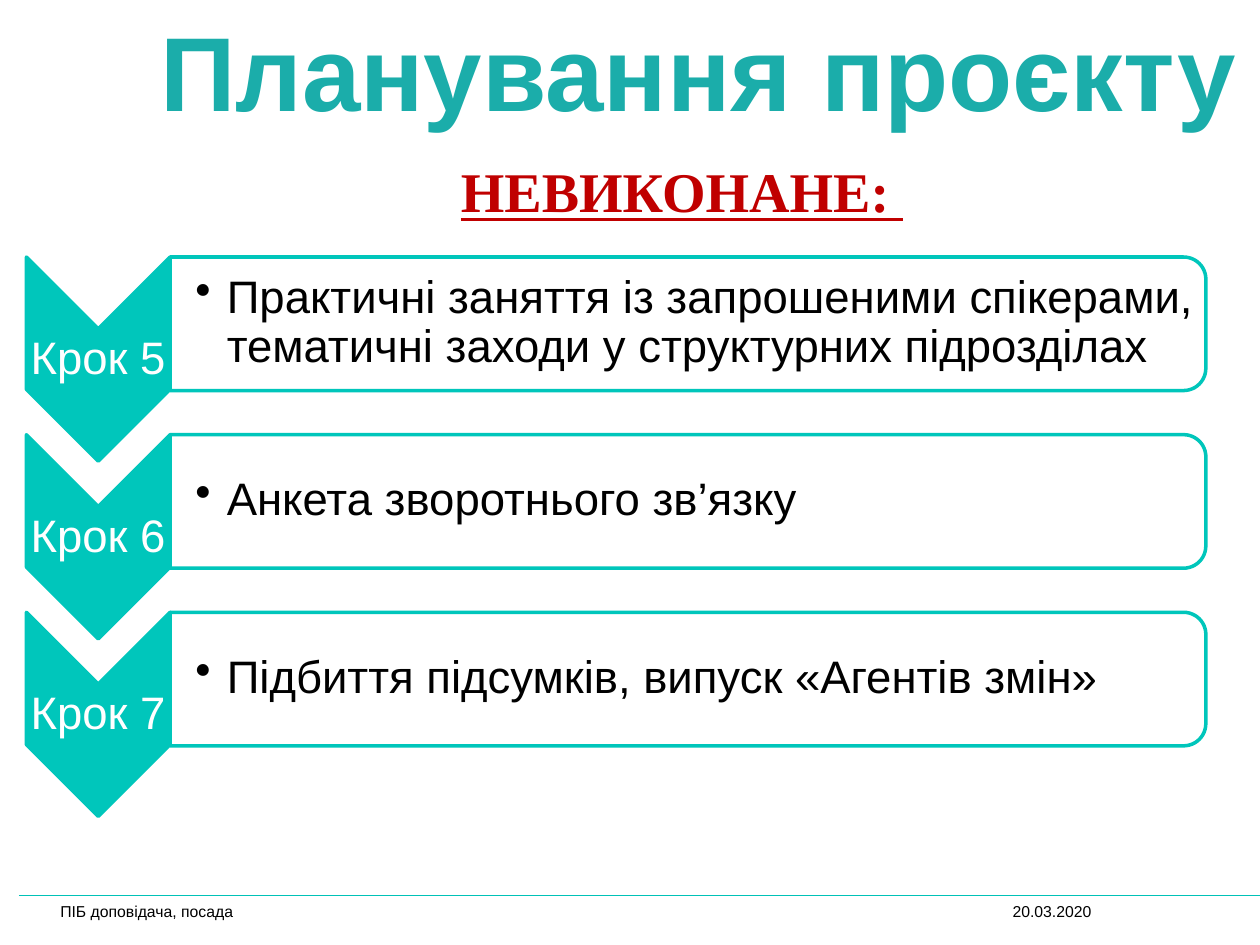
from typing import NamedTuple

from pptx import Presentation
from pptx.dml.color import RGBColor
from pptx.enum.shapes import MSO_CONNECTOR, MSO_SHAPE
from pptx.enum.text import MSO_ANCHOR, MSO_AUTO_SIZE, PP_ALIGN
from pptx.oxml.ns import qn
from pptx.util import Inches, Pt
from lxml.etree import SubElement

HUES = {
    "teal": "00C6BB", "rule": "00C2B7", "title": "1BADAA",
    "red": "C00000", "white": "FFFFFF", "black": "000000",
}
TOP, PITCH = 2.04, 1.41


class Step(NamedTuple):
    name: str
    task: str


class Box(NamedTuple):
    left: float
    top: float
    width: float
    height: float


STEPS = [
    Step("Крок 5", "Практичні заняття із запрошеними спікерами, тематичні заходи у структурних підрозділах"),
    Step("Крок 6", "Анкета зворотнього зв’язку"),
    Step("Крок 7", "Підбиття підсумків, випуск «Агентів змін»"),
]


def hue(name: str) -> RGBColor:
    return RGBColor.from_string(HUES[name])


def place(shape, box: Box) -> None:
    for key, value in box._asdict().items():
        setattr(shape, key, Inches(value))


def write(shape, text: str, color: str, font: dict, frame: dict, para: dict, indent=None, bullet=False):
    body = shape.text_frame
    for key, value in frame.items():
        setattr(body, key, value)
    line = body.paragraphs[0]
    for key, value in para.items():
        setattr(line, key, value)
    props = line._p.get_or_add_pPr()
    if indent:
        props.set("marL", str(Inches(indent[0])))
        props.set("indent", str(Inches(indent[1])))
    if bullet:
        SubElement(props, qn("a:buChar")).set("char", "•")
    run = line.add_run()
    run.text = text
    for key, value in {"name": "Arial", **font}.items():
        setattr(run.font, key, value)
    run.font.color.rgb = hue(color)


def label(slide, box: Box, *args, **more) -> None:
    write(slide.shapes.add_textbox(*map(Inches, box)), *args, **more)


def turned(slide, kind: MSO_SHAPE, box: Box, fill: str, alpha: int = 100) -> None:
    left = box.left + (box.width - box.height) / 2
    top = box.top + (box.height - box.width) / 2
    shape = slide.shapes.add_shape(kind, *map(Inches, (left, top, box.height, box.width)))
    shape.rotation = 90
    shape.shadow.inherit = False
    shape.fill.solid()
    shape.fill.fore_color.rgb = hue(fill)
    if alpha < 100:
        tint = shape.fill._xPr.find(qn("a:solidFill"))[0]
        SubElement(tint, qn("a:alpha")).set("val", str(alpha * 1000))
    shape.line.color.rgb = hue("teal")
    shape.line.width = Pt(2)


def draw(slide, step: Step, top: float) -> None:
    pad = Inches(0.02)
    frame = {
        "word_wrap": True, "vertical_anchor": MSO_ANCHOR.MIDDLE,
        "margin_left": pad, "margin_right": pad, "margin_top": pad, "margin_bottom": pad,
    }
    font = {"size": Pt(26)}
    turned(slide, MSO_SHAPE.CHEVRON, Box(0.21, top, 1.14, 1.62), "teal")
    label(slide, Box(0.21, top + 0.57, 1.14, 0.49), step.name, "white", font, frame,
          {"alignment": PP_ALIGN.CENTER, "line_spacing": 0.9})
    turned(slide, MSO_SHAPE.ROUND_2_SAME_RECTANGLE, Box(1.35, top, 8.22, 1.06), "white", 90)
    label(slide, Box(1.35, top + 0.05, 8.16, 0.95), step.task, "black", font,
          {**frame, "margin_left": Inches(0.2)}, {"line_spacing": 0.9},
          indent=(0.25, -0.25), bullet=True)


def main() -> None:
    deck = Presentation()
    deck.slide_width, deck.slide_height = Inches(10), Inches(7.5)
    slide = deck.slides.add_slide(deck.slide_layouts[5])

    rule = slide.shapes.add_connector(MSO_CONNECTOR.STRAIGHT, *map(Inches, (0.15, 7.11, 10, 7.11)))
    rule.line.color.rgb = hue("rule")
    rule.line.width = Pt(0.75)
    SubElement(rule._element.spPr, qn("a:effectLst"))

    foot = {"word_wrap": True, "vertical_anchor": MSO_ANCHOR.BOTTOM}
    small = {"size": Pt(9)}
    label(slide, Box(7.66, 6.96, 1.1, 0.4), "20.03.2020", "black", small, foot,
          {"alignment": PP_ALIGN.RIGHT})
    label(slide, Box(0.38, 6.96, 7.09, 0.4), "ПІБ доповідача, посада", "black", small, foot, {})

    free = {"word_wrap": False, "auto_size": MSO_AUTO_SIZE.SHAPE_TO_FIT_TEXT,
            "vertical_anchor": MSO_ANCHOR.TOP}
    title = slide.shapes.title
    place(title, Box(1.17, 0, 8.82, 1.11))
    write(title, "Планування проєкту", "title", {"size": Pt(60), "bold": True}, free,
          {"alignment": PP_ALIGN.LEFT})
    label(slide, Box(3.31, 0.93, 4, 0.82), "НЕВИКОНАНЕ: ", "red",
          {"name": "Times New Roman", "size": Pt(32), "bold": True, "underline": True}, free,
          {"alignment": PP_ALIGN.JUSTIFY, "line_spacing": 1.5, "space_after": Pt(10)},
          indent=(0.25, 0))

    for row, step in enumerate(STEPS):
        draw(slide, step, TOP + row * PITCH)
    deck.save("out.pptx")


if __name__ == "__main__":
    main()
